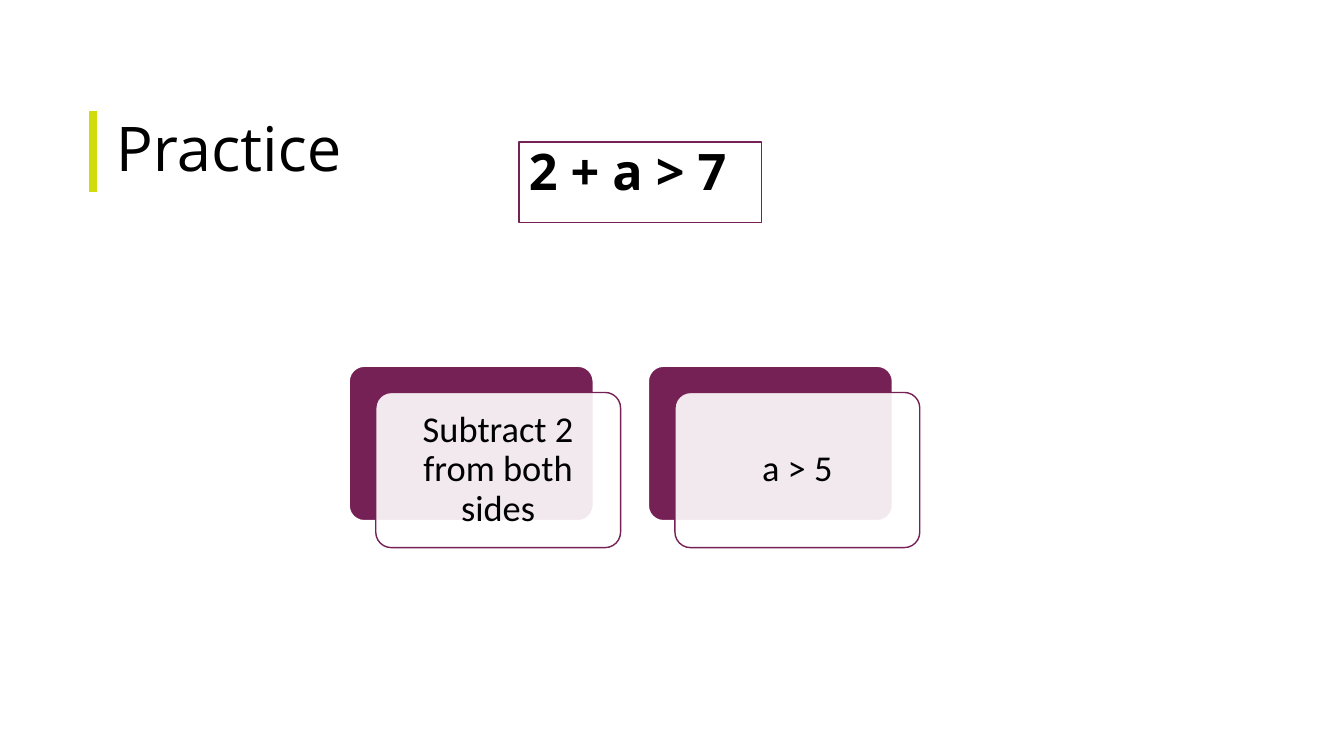
from dataclasses import dataclass

from lxml import etree
from pptx import Presentation
from pptx.dml.color import RGBColor
from pptx.enum.shapes import MSO_CONNECTOR, MSO_SHAPE
from pptx.enum.text import MSO_ANCHOR, PP_ALIGN
from pptx.oxml.ns import qn
from pptx.util import Cm, Pt

STRAIGHT = MSO_CONNECTOR.STRAIGHT
RECTANGLE = MSO_SHAPE.RECTANGLE
ROUNDED = MSO_SHAPE.ROUNDED_RECTANGLE
TOP, MIDDLE = MSO_ANCHOR.TOP, MSO_ANCHOR.MIDDLE
LEFT, CENTER = PP_ALIGN.LEFT, PP_ALIGN.CENTER


@dataclass(frozen=True)
class Theme:
    plum: RGBColor = RGBColor(0x75, 0x21, 0x56)
    lime: RGBColor = RGBColor(0xD2, 0xDB, 0x0E)
    white: RGBColor = RGBColor(0xFF, 0xFF, 0xFF)
    black: RGBColor = RGBColor(0, 0, 0)
    heading_font: str = "Open Sans"
    body_font: str = "Calibri"
    title_size: int = 44
    equation_size: int = 36
    step_size: int = 26
    line_spacing: float = 0.9


class SlideBuilder:
    def __init__(self, slide, theme):
        self.slide = slide
        self.theme = theme

    def line(self, x1, y1, x2, y2, color, width):
        connector = self.slide.shapes.add_connector(
            STRAIGHT, Cm(x1), Cm(y1), Cm(x2), Cm(y2))
        connector.line.color.rgb = color
        connector.line.width = Pt(width)
        etree.SubElement(connector.element.spPr, qn("a:effectLst"))

    def box(self, kind, left, top, width, height, fill, outline,
            outline_width=1, opacity=100):
        shape = self.slide.shapes.add_shape(
            kind, Cm(left), Cm(top), Cm(width), Cm(height))
        shape.shadow.inherit = False
        shape.fill.solid()
        shape.fill.fore_color.rgb = fill
        if opacity < 100:
            color = shape.element.spPr.find(f"{qn('a:solidFill')}/{qn('a:srgbClr')}")
            etree.SubElement(color, qn("a:alpha"), val=str(opacity * 1000))
        shape.line.color.rgb = outline
        shape.line.width = Pt(outline_width)
        if kind == ROUNDED:
            shape.adjustments[0] = 0.1
        return shape

    def text_box(self, left, top, width, height):
        return self.slide.shapes.add_textbox(
            Cm(left), Cm(top), Cm(width), Cm(height))

    def add_text(self, shape, text, font, size, bold=False, align=LEFT,
                 anchor=MIDDLE, inset=None):
        frame = shape.text_frame
        frame.word_wrap = True
        frame.vertical_anchor = anchor
        if inset is not None:
            frame.margin_left = frame.margin_right = Cm(inset)
            frame.margin_top = frame.margin_bottom = Cm(inset)
        paragraph = frame.paragraphs[0]
        paragraph.alignment = align
        paragraph.line_spacing = self.theme.line_spacing
        run = paragraph.add_run()
        run.text = text
        run.font.name = font
        run.font.size = Pt(size)
        run.font.bold = bold
        run.font.color.rgb = self.theme.black

    def step(self, left, top, text):
        theme = self.theme
        width, height = 6.17, 3.91
        self.box(ROUNDED, left, top, width, height, theme.plum, theme.white, 1.5)
        card = self.box(ROUNDED, left + 0.68, top + 0.67, width, height,
                        theme.white, theme.plum, opacity=90)
        self.add_text(card, text, theme.body_font, theme.step_size,
                      align=CENTER, inset=0.38)


def main():
    presentation = Presentation()
    presentation.slide_width, presentation.slide_height = Cm(33.87), Cm(19.05)
    slide = presentation.slides.add_slide(presentation.slide_layouts[6])
    theme = Theme()
    builder = SlideBuilder(slide, theme)

    # Title with accent bar
    builder.line(2.34, 2.8, 2.34, 4.83, theme.lime, 6)
    title = builder.text_box(2.67, 2.8, 29.2, 2.03)
    builder.add_text(title, "Practice", theme.heading_font, theme.title_size)

    # Inequality to solve
    equation = builder.box(RECTANGLE, 13.08, 3.58, 6.12, 2.03,
                           theme.white, theme.plum)
    builder.add_text(equation, "2 + a > 7", theme.heading_font,
                     theme.equation_size, bold=True, anchor=TOP)

    # Solution steps
    for index, text in enumerate(["Subtract 2 from both sides", "a > 5"]):
        builder.step(8.79 + index * 7.54, 9.22, text)

    presentation.save("out.pptx")


if __name__ == "__main__":
    main()
